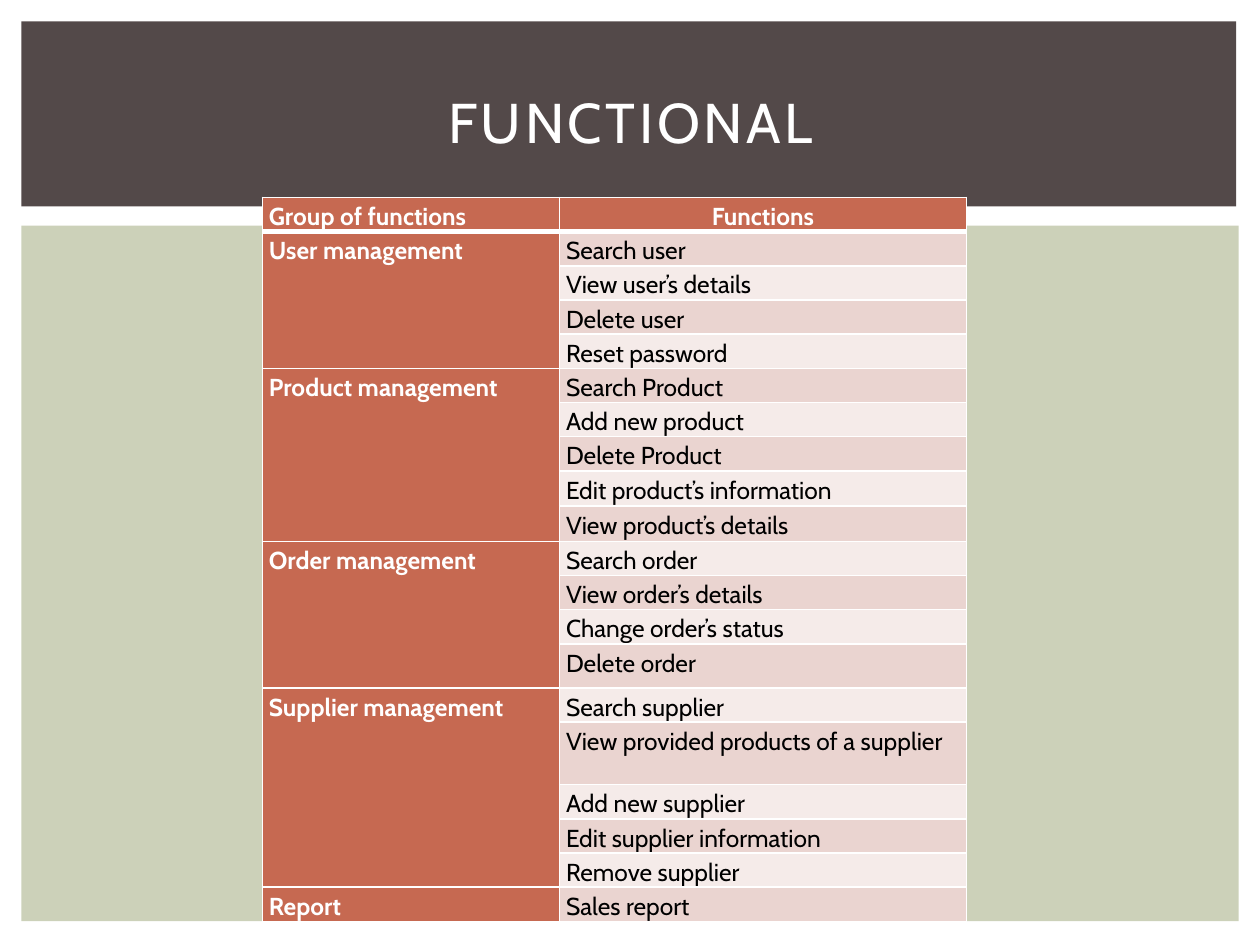
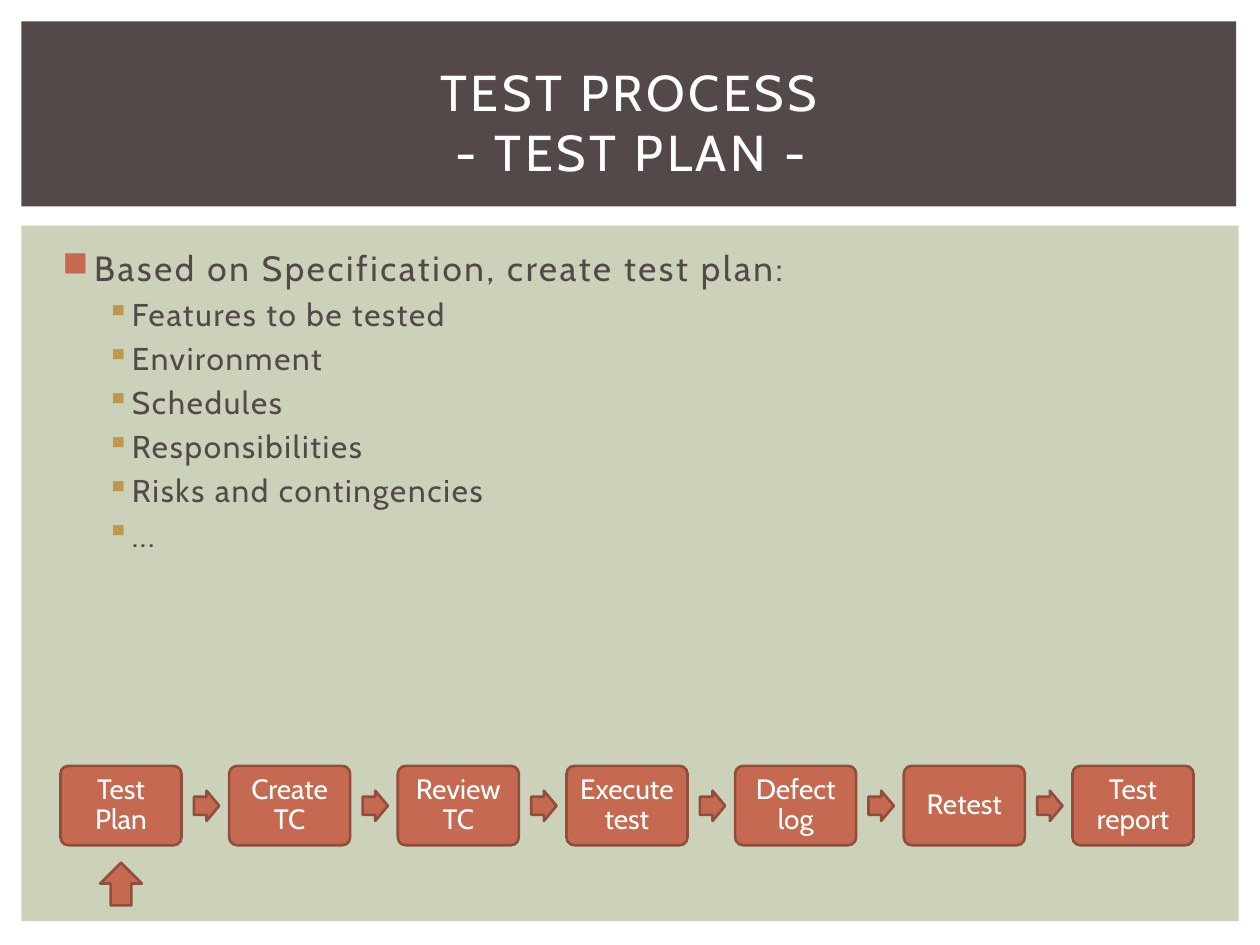
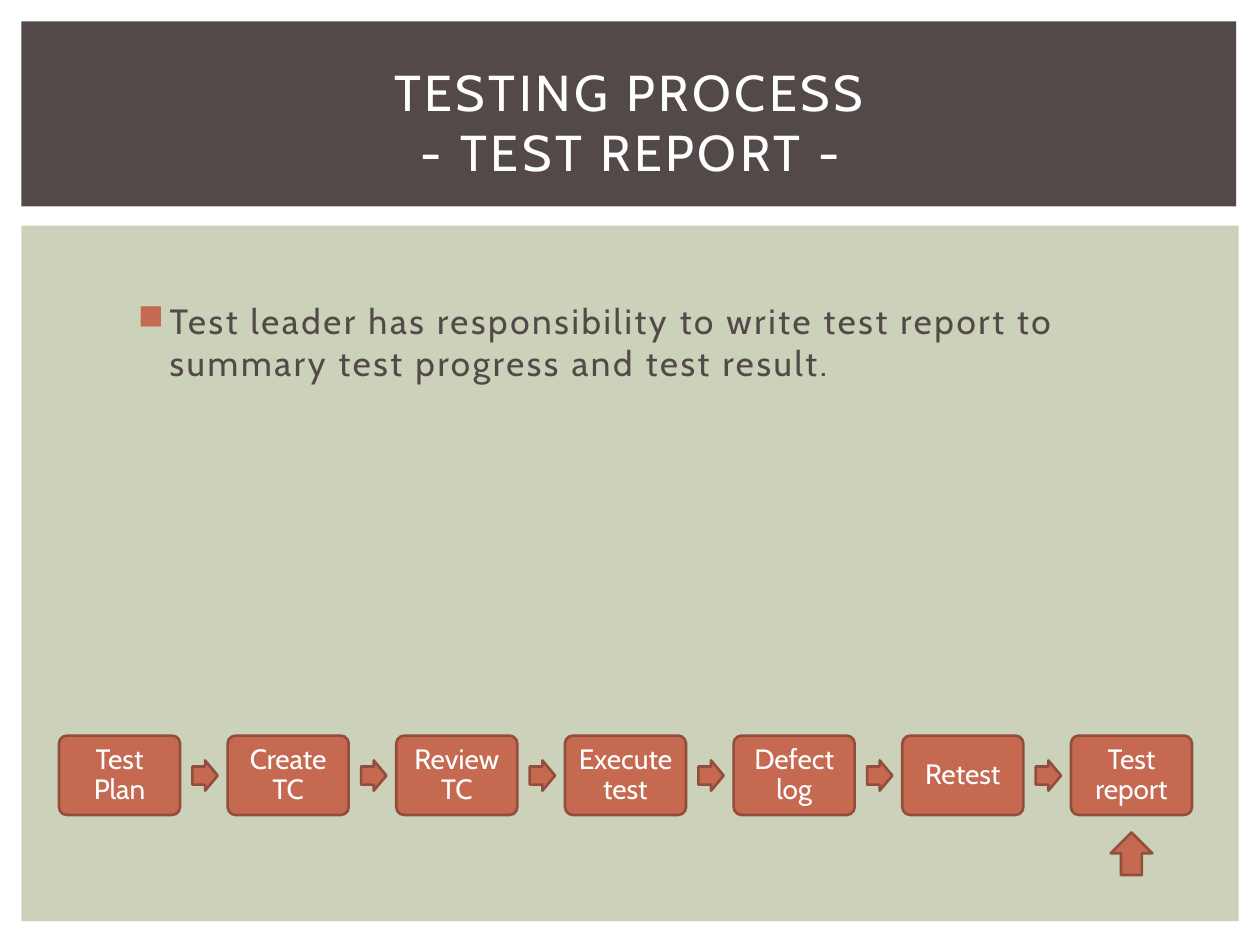
from collections import namedtuple
from dataclasses import dataclass

from lxml import etree
from pptx import Presentation
from pptx import util as u
from pptx.dml.color import RGBColor
from pptx.enum import shapes, text
from pptx.oxml.ns import qn

Box = namedtuple("Box", "left top width height")


@dataclass(frozen=True)
class Theme:
    font: str = "Cabin"
    white: str = "FFFFFF"
    black: str = "000000"
    dark: str = "534949"
    sage: str = "CCD1B9"
    rust: str = "C66951"
    rust_edge: str = "924E3C"
    gold: str = "BF974D"
    row_tints: tuple = ("EAD4D0", "F5EBE9")
    title_size: float = 32
    two_line_title_size: float = 28.8
    body_sizes: tuple = (20, 18)
    step_size: float = 16
    table_size: float = 14


THEME = Theme()
BODY_PANEL = Box(0.43, 4.55, 24.54, 14.02)
TITLE_BAND = Box(0.43, 0.43, 24.49, 3.73)
TITLE_BOX = Box(1.07, 0.99, 23.29, 2.92)

FUNCTION_GROUPS = {
    "User management": ["Search user", "View user’s details", "Delete user", "Reset password"],
    "Product management": ["Search Product", "Add new product", "Delete Product",
                           "Edit product’s information", "View product’s details"],
    "Order management": ["Search order", "View order’s details", "Change order’s status",
                         "Delete order"],
    "Supplier management": ["Search supplier", "View provided products of a supplier",
                            "Add new supplier", "Edit supplier information", "Remove supplier"],
    "Report": ["Sales report"],
}
ROW_HEIGHT = 0.69
TALLER_ROWS = {"Edit product’s information": 0.71, "View product’s details": 0.71,
               "Delete order": 0.89, "View provided products of a supplier": 1.26}
TEST_STEPS = ["Test Plan", "Create TC", "Review TC", "Execute test", "Defect log", "Retest",
              "Test report"]


def lengths(box):
    return [u.Cm(value) for value in box]


def format_runs(paragraph, size, color, bold=False, spacing=0):
    """Style every run; spacing is the letter spacing in points."""
    for run in paragraph.runs:
        run.font.name = THEME.font
        run.font.size = u.Pt(size)
        run.font.bold = bold
        run.font.color.rgb = RGBColor.from_string(color)
        if spacing:
            run.font._element.set("spc", str(int(spacing * 100)))


def add_filled_shape(slide, kind, box, fill, edge=None, adjustments=()):
    shape = slide.shapes.add_shape(kind, *lengths(box))
    shape.shadow.inherit = False
    shape.fill.solid()
    shape.fill.fore_color.rgb = RGBColor.from_string(fill)
    if edge:
        shape.line.color.rgb = RGBColor.from_string(edge)
        shape.line.width = u.Pt(1.5)
    else:
        shape.line.fill.background()
    for index, value in enumerate(adjustments):
        shape.adjustments[index] = value
    return shape


def add_titled_slide(presentation, title, size):
    slide = presentation.slides.add_slide(presentation.slide_layouts[6])
    add_filled_shape(slide, shapes.MSO_SHAPE.RECTANGLE, BODY_PANEL, THEME.sage)
    add_filled_shape(slide, shapes.MSO_SHAPE.RECTANGLE, TITLE_BAND, THEME.dark)
    frame = slide.shapes.add_textbox(*lengths(TITLE_BOX)).text_frame
    frame.word_wrap = True
    frame.vertical_anchor = text.MSO_ANCHOR.MIDDLE
    paragraph = frame.paragraphs[0]
    paragraph.text = title
    paragraph.alignment = text.PP_ALIGN.CENTER
    format_runs(paragraph, size, THEME.white, spacing=2)
    return slide


def set_bullet(paragraph, symbol, color, margin, hanging):
    properties = paragraph._p.get_or_add_pPr()
    properties.set("marL", str(u.Cm(margin)))
    properties.set("indent", str(-u.Cm(hanging)))
    bullet_color = etree.SubElement(properties, qn("a:buClr"))
    etree.SubElement(bullet_color, qn("a:srgbClr"), val=color)
    etree.SubElement(properties, qn("a:buChar"), char=symbol)


def add_bullets(slide, box, items):
    """Write (level, words) items as a bulleted list of two levels."""
    styles = [("■", THEME.rust, 0.76, 0.64, 1.5), ("▪", THEME.gold, 1.52, 0.51, 1)]
    frame = slide.shapes.add_textbox(*lengths(box)).text_frame
    frame.word_wrap = True
    frame.text = "\n".join(words for _, words in items)
    for paragraph, (level, _) in zip(frame.paragraphs, items):
        symbol, color, margin, hanging, spacing = styles[level]
        size = THEME.body_sizes[level]
        paragraph.level = level
        paragraph.space_before = u.Pt(size * 0.2)
        set_bullet(paragraph, symbol, color, margin, hanging)
        format_runs(paragraph, size, THEME.dark, spacing=spacing)


def add_test_flow(slide, left, top, current):
    """Draw the row of test steps and point at the current one from below."""
    pitch = 3.4
    step = Box(left, top, 2.44, 1.6)
    arrow = Box(left + 2.69, top + 0.5, 0.51, 0.61)
    pointer_width, pointer_height = 0.86, 0.84
    pointer = Box(left + TEST_STEPS.index(current) * pitch + (step.width - pointer_width) / 2,
                  top + 1.96, pointer_width, pointer_height)
    add_filled_shape(slide, shapes.MSO_SHAPE.RIGHT_ARROW, pointer, THEME.rust,
                     THEME.rust_edge).rotation = 270
    for index, name in enumerate(TEST_STEPS):
        shift = index * pitch
        if index:
            add_filled_shape(slide, shapes.MSO_SHAPE.RIGHT_ARROW,
                             arrow._replace(left=arrow.left + shift - pitch),
                             THEME.rust, THEME.rust_edge, (0.6, 0.5))
        shape = add_filled_shape(slide, shapes.MSO_SHAPE.ROUNDED_RECTANGLE,
                                 step._replace(left=left + shift),
                                 THEME.rust, THEME.rust_edge, (0.1,))
        frame = shape.text_frame
        frame.word_wrap = True
        frame.vertical_anchor = text.MSO_ANCHOR.MIDDLE
        frame.margin_left = frame.margin_right = u.Cm(0.18)
        frame.margin_top = frame.margin_bottom = u.Cm(0.18)
        paragraph = frame.paragraphs[0]
        paragraph.text = name
        paragraph.alignment = text.PP_ALIGN.CENTER
        paragraph.line_spacing = 0.9
        format_runs(paragraph, THEME.step_size, THEME.white)


def set_cell_borders(cell, bottom_width):
    properties = cell._tc.get_or_add_tcPr()
    widths = {"a:lnL": 1, "a:lnR": 1, "a:lnT": 1, "a:lnB": bottom_width}
    for position, (tag, width) in enumerate(widths.items()):
        line = etree.Element(qn(tag), w=str(u.Pt(width)))
        fill = etree.SubElement(line, qn("a:solidFill"))
        etree.SubElement(fill, qn("a:srgbClr"), val=THEME.white)
        properties.insert(position, line)


def fill_cell(cell, words, fill, color, bold=False, bottom_width=1):
    cell.fill.solid()
    cell.fill.fore_color.rgb = RGBColor.from_string(fill)
    cell.margin_left = cell.margin_right = u.Cm(0.13)
    cell.margin_top = cell.margin_bottom = 0
    set_cell_borders(cell, bottom_width)
    paragraph = cell.text_frame.paragraphs[0]
    paragraph.text = words
    paragraph.line_spacing = 1.15
    format_runs(paragraph, THEME.table_size, color, bold)


def add_function_table(slide, left, top, column_widths):
    """List each group once, merged down beside its functions."""
    functions = [name for names in FUNCTION_GROUPS.values() for name in names]
    heights = [ROW_HEIGHT] + [TALLER_ROWS.get(name, ROW_HEIGHT) for name in functions]
    box = Box(left, top, sum(column_widths), sum(heights))
    table = slide.shapes.add_table(len(heights), 2, *lengths(box)).table
    for column, width in zip(table.columns, column_widths):
        column.width = u.Cm(width)
    for row, height in zip(table.rows, heights):
        row.height = u.Cm(height)

    for index, heading in enumerate(["Group of functions", "Functions"]):
        fill_cell(table.cell(0, index), heading, THEME.rust, THEME.white, True, 3)
    functions_heading = table.cell(0, 1)
    functions_heading.vertical_anchor = text.MSO_ANCHOR.MIDDLE
    functions_heading.text_frame.paragraphs[0].alignment = text.PP_ALIGN.CENTER

    first = 1
    for group, names in FUNCTION_GROUPS.items():
        for row, name in enumerate(names, first):
            fill_cell(table.cell(row, 0), group if row == first else "",
                      THEME.rust, THEME.white, True)
            fill_cell(table.cell(row, 1), name, THEME.row_tints[(row - 1) % 2], THEME.black)
        if len(names) > 1:
            table.cell(first, 0).merge(table.cell(first + len(names) - 1, 0))
        first += len(names)


def add_functional_slide(presentation):
    slide = add_titled_slide(presentation, "FUNCTIONAL", THEME.title_size)
    add_function_table(slide, left=5.29, top=3.98, column_widths=(5.99, 8.2))


def add_process_slide(presentation, title, body_box, items, flow_corner, current):
    slide = add_titled_slide(presentation, title, THEME.two_line_title_size)
    add_bullets(slide, body_box, items)
    add_test_flow(slide, *flow_corner, current)


def main():
    presentation = Presentation()
    presentation.slide_width, presentation.slide_height = u.Cm(25.4), u.Cm(19.05)
    add_functional_slide(presentation)
    plan_parts = ["Features to be tested", "Environment", "Schedules", "Responsibilities",
                  "Risks and contingencies", "..."]
    add_process_slide(
        presentation, "TEST PROCESS\v- TEST PLAN -", Box(0.89, 4.85, 23.34, 12.24),
        [(0, "Based on Specification, create test plan:")] + [(1, part) for part in plan_parts],
        (1.22, 15.44), "Test Plan")
    add_process_slide(
        presentation, "TESTING PROCESS\v- TEST REPORT -", Box(2.41, 5.92, 20.19, 12.24),
        [(0, "Test leader has responsibility to write test report to summary test progress "
             "and test result.")],
        (1.19, 14.83), "Test report")
    presentation.save("out.pptx")


if __name__ == "__main__":
    main()
